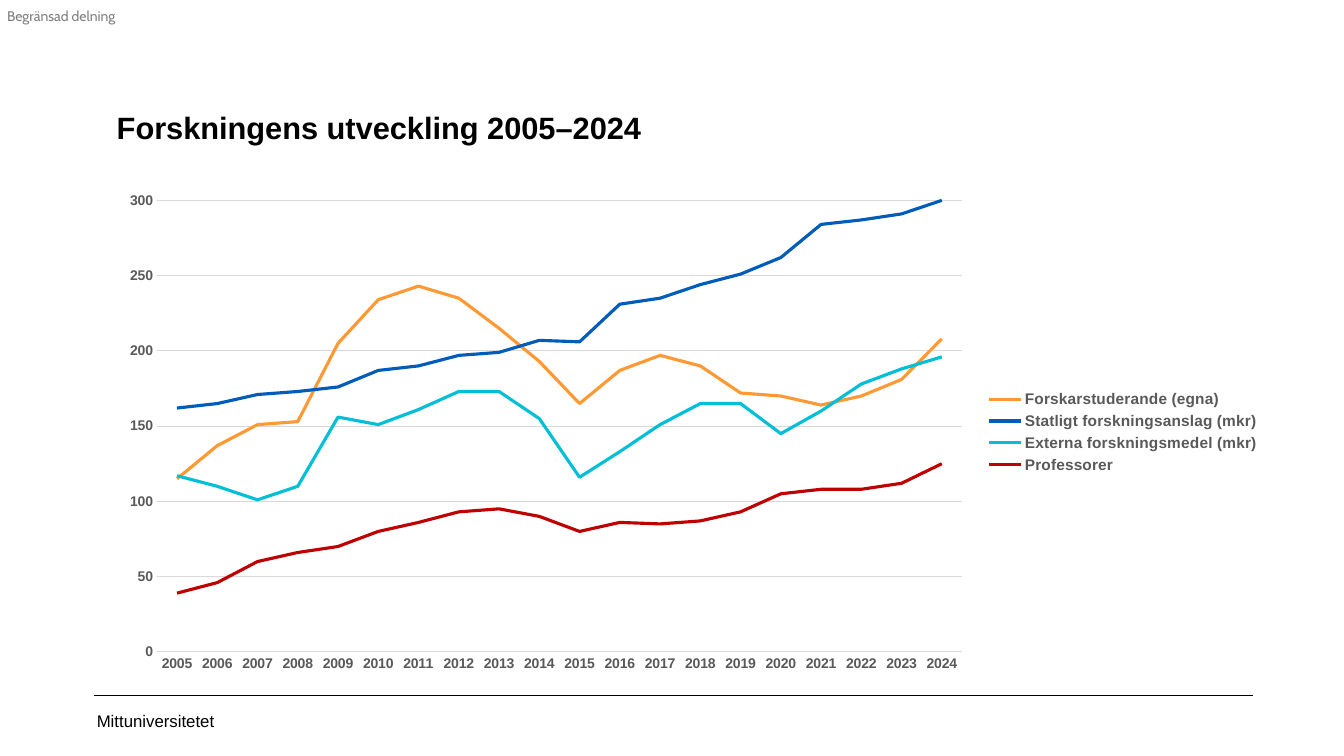
import lxml.etree
import pptx
import pptx.chart.data
import pptx.dml.color
import pptx.enum.chart
import pptx.enum.shapes
import pptx.enum.text
import pptx.oxml
import pptx.oxml.ns
import pptx.util
from dataclasses import dataclass

PX = 9144  # EMU per px, 100 px to the inch


@dataclass(frozen=True)
class Theme:
    font: str = "Arial"
    label_font: str = "Cabin"
    ink: str = "000000"
    muted: str = "595959"
    grid: str = "D9D9D9"
    title_size: int = 22
    title_leading: int = 36
    footer_size: int = 12
    legend_size: int = 11
    small_size: int = 10
    series_width: float = 2.25
    hairline: float = 0.25
    grid_width: float = 0.75


THEME = Theme()
YEARS = [str(year) for year in range(2005, 2025)]
SERIES = [
    ("Forskarstuderande (egna)", "FF9933",
     [115, 137, 151, 153, 205, 234, 243, 235, 215, 193,
      165, 187, 197, 190, 172, 170, 164, 170, 181, 208]),
    ("Statligt forskningsanslag (mkr)", "005CB9",
     [162, 165, 171, 173, 176, 187, 190, 197, 199, 207,
      206, 231, 235, 244, 251, 262, 284, 287, 291, 300]),
    ("Externa forskningsmedel (mkr)", "00BFD6",
     [117, 110, 101, 110, 156, 151, 161, 173, 173, 155,
      116, 133, 151, 165, 165, 145, 160, 178, 188, 196]),
    ("Professorer", "C00000",
     [39, 46, 60, 66, 70, 80, 86, 93, 95, 90,
      80, 86, 85, 87, 93, 105, 108, 108, 112, 125]),
]


def emu(*lengths):
    return [pptx.util.Emu(n * PX) for n in lengths]


def rgb(value):
    return pptx.dml.color.RGBColor.from_string(value)


def set_font(font, size, color, bold=False, name=THEME.font):
    font.name = name
    font.size = pptx.util.Pt(size)
    font.bold = bold
    font.color.rgb = rgb(color)


def set_line(line, color, width):
    line.color.rgb = rgb(color)
    line.width = pptx.util.Pt(width)


def add_text(slide, box, text, size, insets=(10, 5, 10, 5), wrap=True, **font):
    """Add a one-run text box; insets are left, top, right, bottom in px."""
    sp = slide.shapes.add_textbox(*emu(*box))
    tf = sp.text_frame
    tf.word_wrap = wrap
    tf.margin_left, tf.margin_top, tf.margin_right, tf.margin_bottom = emu(*insets)
    r = tf.paragraphs[0].add_run()
    r.text = text
    set_font(r.font, size, THEME.ink, **font)
    return tf


def add_sharing_label(slide, box):
    tf = add_text(slide, box, "Begränsad delning", THEME.small_size,
                  insets=(0, 0, 0, 0), wrap=False, name=THEME.label_font)
    tf.auto_size = pptx.enum.text.MSO_AUTO_SIZE.SHAPE_TO_FIT_TEXT
    qn = pptx.oxml.ns.qn
    color = next(tf.paragraphs[0].runs[0].font._element.iter(qn("a:srgbClr")))
    lxml.etree.SubElement(color, qn("a:alpha")).set("val", "50000")


def add_title(slide, box):
    tf = add_text(slide, box, "Forskningens utveckling 2005–2024",
                  THEME.title_size, bold=True)
    tf.paragraphs[0].line_spacing = pptx.util.Pt(THEME.title_leading)


def add_footer(slide, box):
    """Place the rule along the top of the box and the sender below it."""
    x, y, w, h = box
    rule = slide.shapes.add_connector(
        pptx.enum.shapes.MSO_CONNECTOR.STRAIGHT, *emu(x, y, x + w, y))
    set_line(rule.line, THEME.ink, THEME.hairline)
    lxml.etree.SubElement(rule._element.spPr, pptx.oxml.ns.qn("a:effectLst"))
    tf = add_text(slide, (x - 1, y + 5, 300, h - 5), "Mittuniversitetet",
                  THEME.footer_size, insets=(4, 5, 10, 5))
    tf.vertical_anchor = pptx.enum.text.MSO_ANCHOR.MIDDLE


def style_axes(chart):
    for axis in (chart.category_axis, chart.value_axis):
        axis.major_tick_mark = pptx.enum.chart.XL_TICK_MARK.NONE
        axis.minor_tick_mark = pptx.enum.chart.XL_TICK_MARK.NONE
        set_font(axis.tick_labels.font, THEME.small_size, THEME.muted, bold=True)
    set_line(chart.category_axis.format.line, THEME.grid, THEME.grid_width)
    values = chart.value_axis
    values.minimum_scale, values.maximum_scale, values.major_unit = 0, 300, 50
    values.format.line.fill.background()
    values.has_major_gridlines = True
    set_line(values.major_gridlines.format.line, THEME.grid, THEME.grid_width)


def place_plot(chart, box, plot):
    """Fix the inner plot area, given in px relative to the chart's box."""
    w, h = box[2:]
    parts = zip("xywh", plot, (w, h, w, h))
    sizes = "".join(f'<c:{key} val="{n / whole:.3f}"/>' for key, n, whole in parts)
    layout = pptx.oxml.parse_xml(
        f'<c:layout {pptx.oxml.ns.nsdecls("c")}><c:manualLayout>'
        '<c:layoutTarget val="inner"/><c:xMode val="edge"/><c:yMode val="edge"/>'
        f'{sizes}</c:manualLayout></c:layout>')
    area = chart._chartSpace.chart.plotArea
    for old in area.findall(pptx.oxml.ns.qn("c:layout")):
        area.remove(old)
    area.insert(0, layout)


def add_research_chart(slide, box):
    data = pptx.chart.data.CategoryChartData()
    data.categories = YEARS
    for name, _, values in SERIES:
        data.add_series(name, values)
    chart = slide.shapes.add_chart(
        pptx.enum.chart.XL_CHART_TYPE.LINE, *emu(*box), data).chart
    set_font(chart.font, THEME.small_size, THEME.ink)
    chart.has_title = False
    chart.plots[0].vary_by_categories = False
    for series, (_, color, _) in zip(chart.plots[0].series, SERIES):
        series.smooth = False
        series.marker.style = pptx.enum.chart.XL_MARKER_STYLE.NONE
        set_line(series.format.line, color, THEME.series_width)
    style_axes(chart)
    chart.has_legend = True
    chart.legend.position = pptx.enum.chart.XL_LEGEND_POSITION.RIGHT
    chart.legend.include_in_layout = False
    set_font(chart.legend.font, THEME.legend_size, THEME.muted, bold=True)
    place_plot(chart, box, (50, 18, 798, 448))


def main():
    prs = pptx.Presentation()
    prs.slide_width, prs.slide_height = emu(1333, 750)
    slide = prs.slides.add_slide(prs.slide_layouts[6])
    add_footer(slide, (93, 690, 1150, 45))
    add_sharing_label(slide, (7, 7, 114, 17))
    add_title(slide, (106, 90, 1154, 71))
    add_research_chart(slide, (106, 181, 1154, 495))
    prs.save("out.pptx")


if __name__ == "__main__":
    main()
